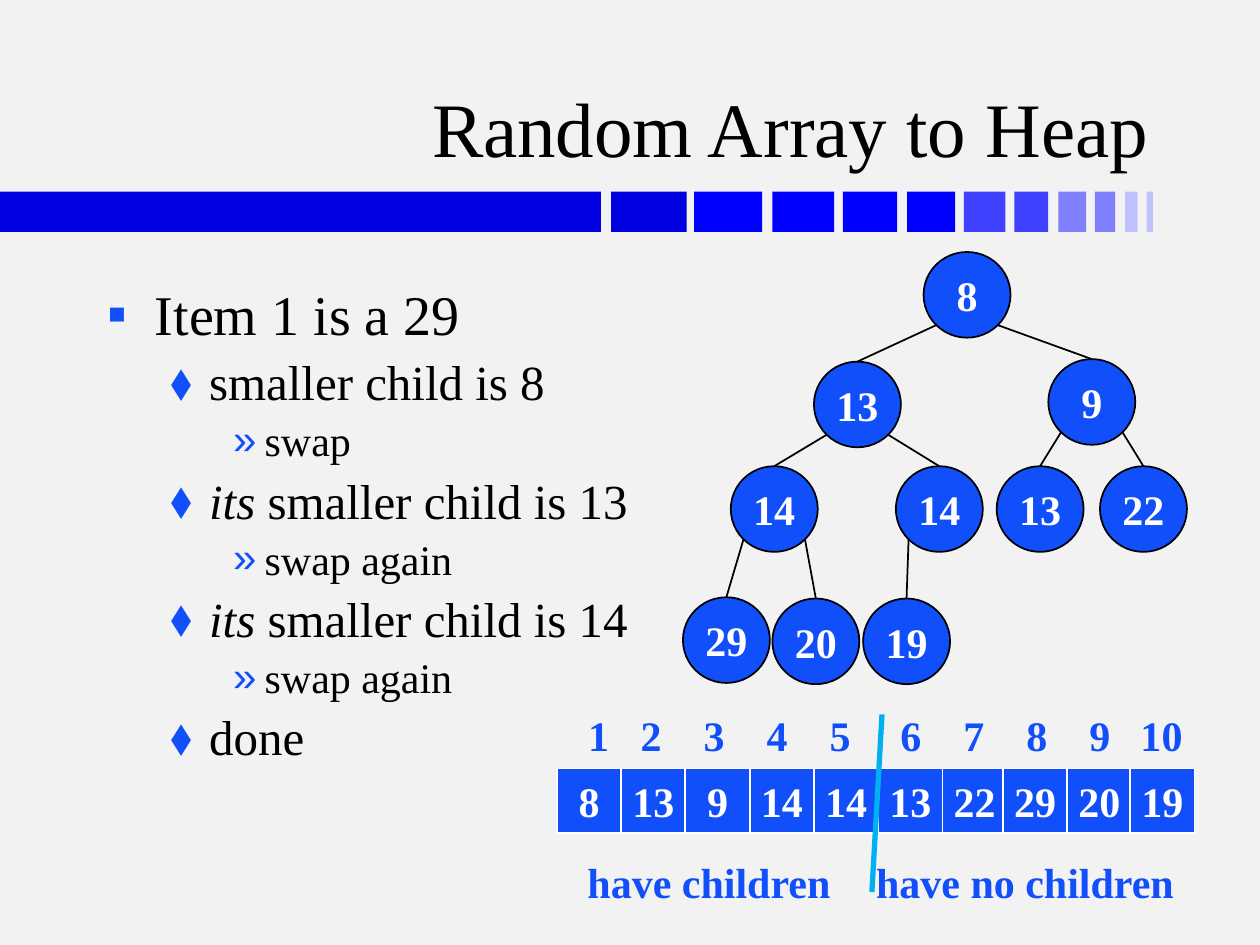
from dataclasses import dataclass

from lxml import etree
from pptx import Presentation
from pptx.dml.color import RGBColor
from pptx.enum.shapes import MSO_CONNECTOR, MSO_SHAPE
from pptx.enum.text import MSO_ANCHOR, MSO_AUTO_SIZE, PP_ALIGN
from pptx.oxml.ns import qn
from pptx.util import Inches, Pt

RECTANGLE = MSO_SHAPE.RECTANGLE
OVAL = MSO_SHAPE.OVAL
STRAIGHT = MSO_CONNECTOR.STRAIGHT
TOP = MSO_ANCHOR.TOP
MIDDLE = MSO_ANCHOR.MIDDLE
BOTTOM = MSO_ANCHOR.BOTTOM
NO_FIT = MSO_AUTO_SIZE.NONE
LEFT = PP_ALIGN.LEFT
CENTER = PP_ALIGN.CENTER
RIGHT = PP_ALIGN.RIGHT


@dataclass(frozen=True)
class Theme:
    font: str = "Times New Roman"
    background: str = "F2F2F2"
    ink: str = "000000"
    accent: str = "114FFB"
    light: str = "FFFFFF"
    divider: str = "00B0F0"
    title_size: int = 44
    list_sizes: tuple = (32, 28, 24)
    label_size: int = 24


BULLETS = [("▪", 0.38, -0.38, 20), ("⬧", 0.81, -0.31, 10), ("»", 1.25, -0.25, 10)]

STEPS = [
    (0, "", "Item 1 is a 29"),
    (1, "", "smaller child is 8"),
    (2, "", "swap"),
    (1, "its", " smaller child is 13"),
    (2, "", "swap again"),
    (1, "its", " smaller child is 14"),
    (2, "", "swap again"),
    (1, "", "done"),
]

BANNER = [
    (0, 4.77, "0000E0"), (4.85, 0.6, "0000E0"),
    (5.51, 0.54, "0000FF"), (6.13, 0.49, "0000FF"),
    (6.69, 0.43, "0000FF"), (7.2, 0.38, "0000FF"),
    (7.65, 0.33, "4040FF"), (8.05, 0.27, "4040FF"),
    (8.4, 0.22, "8080FF"), (8.69, 0.16, "8080FF"),
    (8.93, 0.1, "C0C0FF"), (9.1, 0.05, "C0C0FF"),
]

HEAP = [8, 13, 9, 14, 14, 13, 22, 29, 20, 19]
NODE_PLACES = [
    (7.33, 2), (6.46, 2.87), (8.32, 2.85), (5.8, 3.7), (7.11, 3.7),
    (7.91, 3.7), (8.73, 3.7), (5.42, 4.74), (6.13, 4.75), (6.85, 4.75),
]
NODE_WIDTH, NODE_HEIGHT = 0.69, 0.68
DIAGONAL = 0.5 ** 0.5
CELL_LEFTS = [4.42, 4.93, 5.44, 5.95, 6.46, 6.97, 7.48, 7.96, 8.47, 8.97]
CELL_SIZE = 0.51
INDEX_TABS = [0.5, 1, 1.5, 2, 2.56, 3.06, 3.56, 4.06, 4.55]


class SlideBuilder:
    def __init__(self, slide, theme):
        self.slide = slide
        self.theme = theme
        slide.background.fill.solid()
        slide.background.fill.fore_color.rgb = RGBColor.from_string(theme.background)

    def style(self, paragraph, size, color, bold=False):
        for run in paragraph.runs:
            run.font.name = self.theme.font
            run.font.size = Pt(size)
            run.font.bold = bold
            run.font.color.rgb = RGBColor.from_string(color)

    def place(self, holder, left, top, width, height, anchor):
        holder.left, holder.top = Inches(left), Inches(top)
        holder.width, holder.height = Inches(width), Inches(height)
        holder.text_frame.auto_size = NO_FIT
        holder.text_frame.vertical_anchor = anchor

    def title(self, wording):
        holder = self.slide.shapes.title
        self.place(holder, 0.74, 0.19, 8.48, 1.23, BOTTOM)
        holder.text_frame.text = wording
        heading = holder.text_frame.paragraphs[0]
        heading.alignment = RIGHT
        self.style(heading, self.theme.title_size, self.theme.ink)

    def bullet(self, paragraph, level):
        symbol, margin, indent, space = BULLETS[level]
        paragraph.level = level
        properties = paragraph._p.get_or_add_pPr()
        properties.set("marL", str(Inches(margin)))
        properties.set("indent", str(Inches(indent)))
        before = etree.SubElement(properties, qn("a:spcBef"))
        etree.SubElement(before, qn("a:spcPct"), val=str(space * 1000))
        color = etree.SubElement(properties, qn("a:buClr"))
        etree.SubElement(color, qn("a:srgbClr"), val=self.theme.accent)
        etree.SubElement(properties, qn("a:buChar"), char=symbol)

    def steps(self, items):
        holder = self.slide.placeholders[1]
        self.place(holder, 0.75, 2.17, 8.5, 4.5, TOP)
        frame = holder.text_frame
        for position, (level, emphasis, wording) in enumerate(items):
            step = frame.add_paragraph() if position else frame.paragraphs[0]
            step.text = emphasis or wording
            if emphasis:
                step.runs[0].font.italic = True
                step.add_run().text = wording
            self.bullet(step, level)
            self.style(step, self.theme.list_sizes[level], self.theme.ink)

    def block(self, kind, left, top, width, height, fill, outline=None, wording=""):
        block = self.slide.shapes.add_shape(
            kind, Inches(left), Inches(top), Inches(width), Inches(height))
        block.shadow.inherit = False
        block.fill.solid()
        block.fill.fore_color.rgb = RGBColor.from_string(fill)
        if outline:
            block.line.color.rgb = RGBColor.from_string(outline)
            block.line.width = Pt(1)
        else:
            block.line.fill.background()
        if wording:
            frame = block.text_frame
            frame.word_wrap = False
            frame.vertical_anchor = MIDDLE
            frame.text = wording
            frame.paragraphs[0].alignment = CENTER
            self.style(frame.paragraphs[0], self.theme.label_size, self.theme.light, True)
        return block

    def line(self, start, end, color, weight, target=None):
        line = self.slide.shapes.add_connector(
            STRAIGHT, *(Inches(length) for length in (*start, *end)))
        line.line.color.rgb = RGBColor.from_string(color)
        line.line.width = Pt(weight)
        etree.SubElement(line._element.spPr, qn("a:effectLst"))
        if target is not None:
            line.end_connect(target, 0)

    def label(self, left, top, width, wording, alignment, tabs=()):
        box = self.slide.shapes.add_textbox(
            Inches(left), Inches(top), Inches(width), Inches(0.5))
        box.text_frame.word_wrap = bool(tabs)
        box.text_frame.text = wording
        caption = box.text_frame.paragraphs[0]
        caption.alignment = alignment
        if tabs:
            stops = etree.SubElement(caption._p.get_or_add_pPr(), qn("a:tabLst"))
            for stop in tabs:
                etree.SubElement(stops, qn("a:tab"), pos=str(Inches(stop)), algn="ctr")
        self.style(caption, self.theme.label_size, self.theme.accent, True)

    def tree(self, values):
        theme = self.theme
        nodes = [
            self.block(OVAL, left, top, NODE_WIDTH, NODE_HEIGHT,
                       theme.accent, theme.ink, str(value))
            for value, (left, top) in zip(values, NODE_PLACES)
        ]
        for child in range(1, len(nodes)):
            parent_left, parent_top = NODE_PLACES[(child - 1) // 2]
            side = -1 if child % 2 else 1
            start = (parent_left + NODE_WIDTH / 2 * (1 + side * DIAGONAL),
                     parent_top + NODE_HEIGHT / 2 * (1 + DIAGONAL))
            left, top = NODE_PLACES[child]
            self.line(start, (left + NODE_WIDTH / 2, top), theme.ink, 1, nodes[child])

    def array(self, values):
        for value, left in zip(values, CELL_LEFTS):
            self.block(RECTANGLE, left, 6.1, CELL_SIZE, CELL_SIZE,
                       self.theme.accent, self.theme.light, str(value))
        indexes = "\t".join(str(index + 1) for index in range(len(values)))
        self.label(4.57, 5.58, 5.1, indexes, LEFT, INDEX_TABS)


def main():
    presentation = Presentation()
    presentation.slide_width, presentation.slide_height = Inches(10), Inches(7.5)
    theme = Theme()
    builder = SlideBuilder(
        presentation.slides.add_slide(presentation.slide_layouts[1]), theme)
    for left, width, color in BANNER:
        builder.block(RECTANGLE, left, 1.52, width, 0.32, color)
    builder.title("Random Array to Heap")
    builder.steps(STEPS)
    builder.tree(HEAP)
    builder.array(HEAP)
    builder.line((6.92, 7.08), (7, 5.67), theme.divider, 3)
    builder.label(4.54, 6.75, 2.15, "have children", RIGHT)
    builder.label(6.84, 6.75, 2.59, "have no children", CENTER)
    presentation.save("out.pptx")


if __name__ == "__main__":
    main()
